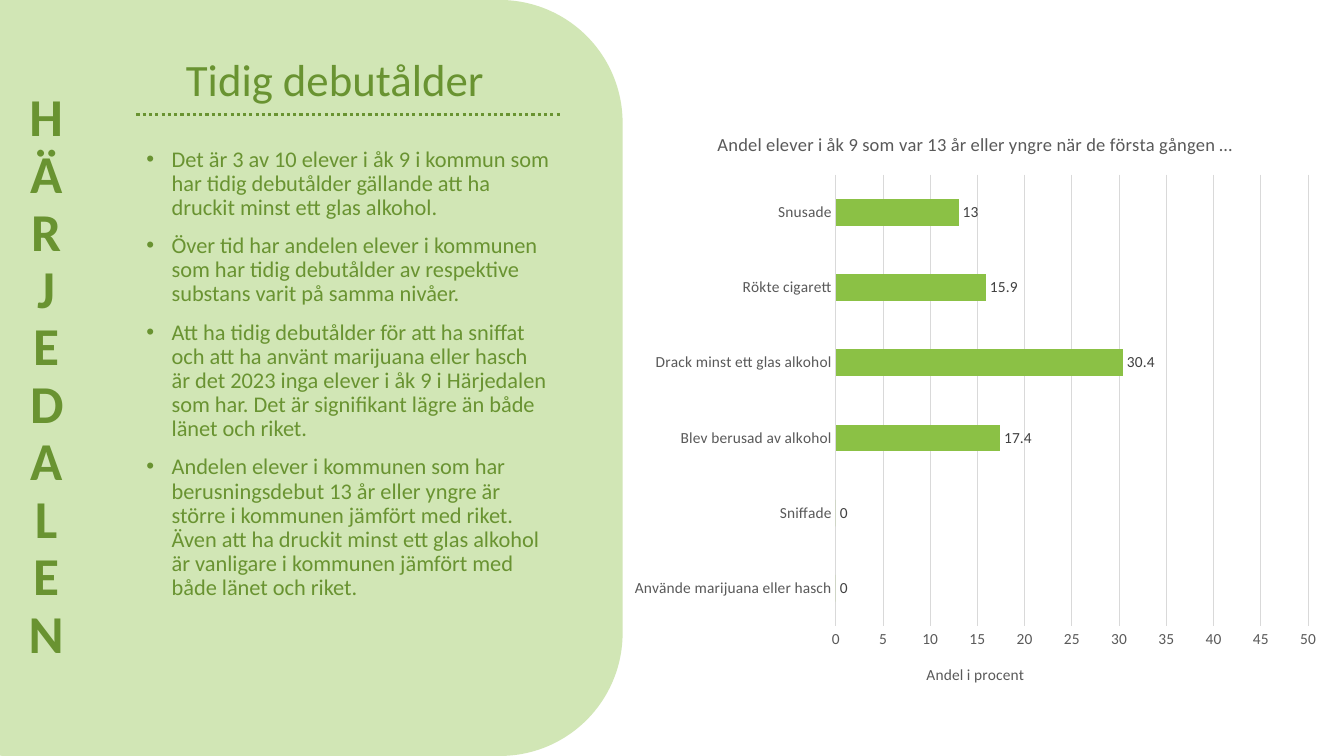
from dataclasses import dataclass

from lxml.etree import SubElement
from pptx import Presentation
from pptx.chart.data import CategoryChartData
from pptx.dml.color import RGBColor
from pptx.enum.chart import XL_CHART_TYPE as ChartType
from pptx.enum.chart import XL_LABEL_POSITION as LabelPosition
from pptx.enum.chart import XL_TICK_MARK as TickMark
from pptx.enum.dml import MSO_LINE as Dash
from pptx.enum.shapes import MSO_CONNECTOR as Connector
from pptx.enum.shapes import MSO_SHAPE as Shape
from pptx.enum.text import MSO_ANCHOR as Anchor
from pptx.enum.text import PP_ALIGN as Align
from pptx.oxml.ns import qn
from pptx.util import Emu, Pt

EMU_PER_PX = 9525
FONT = "Calibri"
PALE_GREEN = RGBColor(0xD1, 0xE6, 0xB5)
DARK_GREEN = RGBColor(0x69, 0x93, 0x31)
BAR_GREEN = RGBColor(0x8B, 0xC1, 0x45)
GRID_GRAY = RGBColor(0xD9, 0xD9, 0xD9)
AXIS_GRAY = RGBColor(0x59, 0x59, 0x59)
LABEL_GRAY = RGBColor(0x40, 0x40, 0x40)


@dataclass(frozen=True)
class TextBlock:
    left: int
    top: int
    width: int
    height: int
    paragraphs: tuple[str, ...]
    size: int
    align: Align = Align.CENTER
    anchor: Anchor = Anchor.BOTTOM
    bold: bool = False
    bullets: bool = False
    stacked: bool = False


@dataclass(frozen=True)
class Debut:
    category: str
    percent: float


TEXT_BLOCKS = (
    TextBlock(139, 12, 360, 94, ("Tidig debutålder",), 32),
    TextBlock(130, 136, 404, 484, (
        "Det är 3 av 10 elever i åk 9 i kommun som har tidig debutålder "
        "gällande att ha druckit minst ett glas alkohol.",
        "Över tid har andelen elever i kommunen som har tidig debutålder av "
        "respektive substans varit på samma nivåer.",
        "Att ha tidig debutålder för att ha sniffat och att ha använt marijuana "
        "eller hasch är det 2023 inga elever i åk 9 i Härjedalen som har. "
        "Det är signifikant lägre än både länet och riket.",
        "Andelen elever i kommunen som har berusningsdebut 13 år eller yngre är "
        "större i kommunen jämfört med riket. Även att ha druckit minst ett glas "
        "alkohol är vanligare i kommunen jämfört med både länet och riket.",
    ), 16, align=Align.LEFT, anchor=Anchor.TOP, bullets=True),
    TextBlock(0, -8, 88, 735, ("HÄRJEDALEN",), 38, bold=True, stacked=True),
)

# Listed from the bottom bar to the top bar
DEBUTS = (
    Debut("Använde marijuana eller hasch", 0),
    Debut("Sniffade", 0),
    Debut("Blev berusad av alkohol", 17.4),
    Debut("Drack minst ett glas alkohol", 30.4),
    Debut("Rökte cigarett", 15.9),
    Debut("Snusade", 13),
)


def px(length: int) -> Emu:
    return Emu(length * EMU_PER_PX)


def style_font(font, size: float, color: RGBColor, bold: bool = False) -> None:
    font.name = FONT
    font.size = Pt(size)
    font.bold = bold
    font.color.rgb = color


def add_panel(page) -> None:
    panel = page.shapes.add_shape(
        Shape.ROUNDED_RECTANGLE, px(-109), px(0), px(702), px(720))
    panel.shadow.inherit = False
    panel.fill.solid()
    panel.fill.fore_color.rgb = PALE_GREEN
    panel.line.fill.background()


def add_bullet(para) -> None:
    properties = para._p.get_or_add_pPr()
    properties.set("marL", str(px(24)))
    properties.set("indent", str(px(-24)))
    SubElement(properties, qn("a:buFont"), typeface="Arial")
    SubElement(properties, qn("a:buChar"), char="•")


def add_text(page, block: TextBlock) -> None:
    box = page.shapes.add_textbox(
        px(block.left), px(block.top), px(block.width), px(block.height))
    frame = box.text_frame
    frame.word_wrap = True
    frame.vertical_anchor = block.anchor
    if block.stacked:
        frame._txBody.bodyPr.set("vert", "wordArtVert")
    for index, text in enumerate(block.paragraphs):
        para = frame.add_paragraph() if index else frame.paragraphs[0]
        para.alignment = block.align
        para.line_spacing = 0.9
        if block.bullets:
            para.space_before = Pt(10)
            add_bullet(para)
        span = para.add_run()
        span.text = text
        style_font(span.font, block.size, DARK_GREEN, block.bold)


def add_dotted_rule(page) -> None:
    rule = page.shapes.add_connector(
        Connector.STRAIGHT, px(130), px(109), px(534), px(109))
    rule.line.color.rgb = DARK_GREEN
    rule.line.width = Pt(2.25)
    rule.line.dash_style = Dash.ROUND_DOT
    SubElement(rule._element.spPr, qn("a:effectLst"))


def set_chart_text(owner, text: str, size: float) -> None:
    span = owner.text_frame.paragraphs[0].add_run()
    span.text = text
    style_font(span.font, size, AXIS_GRAY)


def style_axis(axis) -> None:
    axis.major_tick_mark = TickMark.NONE
    axis.minor_tick_mark = TickMark.NONE
    style_font(axis.tick_labels.font, 11, AXIS_GRAY)


def style_line(line) -> None:
    line.color.rgb = GRID_GRAY
    line.width = Pt(0.75)


def add_debut_chart(page) -> None:
    data = CategoryChartData()
    data.categories = [debut.category for debut in DEBUTS]
    data.add_series("Andel", [debut.percent for debut in DEBUTS])
    chart = page.shapes.add_chart(
        ChartType.BAR_CLUSTERED, px(591), px(106), px(676), px(566), data).chart
    chart.font.name = FONT
    chart.font.size = Pt(11)
    chart.has_legend = False
    chart.has_title = True
    set_chart_text(
        chart.chart_title,
        "Andel elever i åk 9 som var 13 år eller yngre när de första gången …", 13.2)

    # Axes and grid
    categories, values = chart.category_axis, chart.value_axis
    style_axis(categories)
    style_line(categories.format.line)
    style_axis(values)
    values.format.line.fill.background()
    values.minimum_scale, values.maximum_scale, values.major_unit = 0, 50, 5
    values.has_major_gridlines = True
    style_line(values.major_gridlines.format.line)
    values.has_title = True
    set_chart_text(values.axis_title, "Andel i procent", 11)

    # Bars and value labels
    plot = chart.plots[0]
    plot.vary_by_categories = False
    plot.gap_width = 182
    bars = plot.series[0]
    bars.format.fill.solid()
    bars.format.fill.fore_color.rgb = BAR_GREEN
    labels = bars.data_labels
    labels.show_value = True
    labels.position = LabelPosition.OUTSIDE_END
    style_font(labels.font, 11, LABEL_GRAY)


def main() -> None:
    deck = Presentation()
    deck.slide_width, deck.slide_height = px(1280), px(720)
    page = deck.slides.add_slide(deck.slide_layouts[6])
    add_panel(page)
    for block in TEXT_BLOCKS:
        add_text(page, block)
    add_debut_chart(page)
    add_dotted_rule(page)
    deck.save("out.pptx")


if __name__ == "__main__":
    main()
